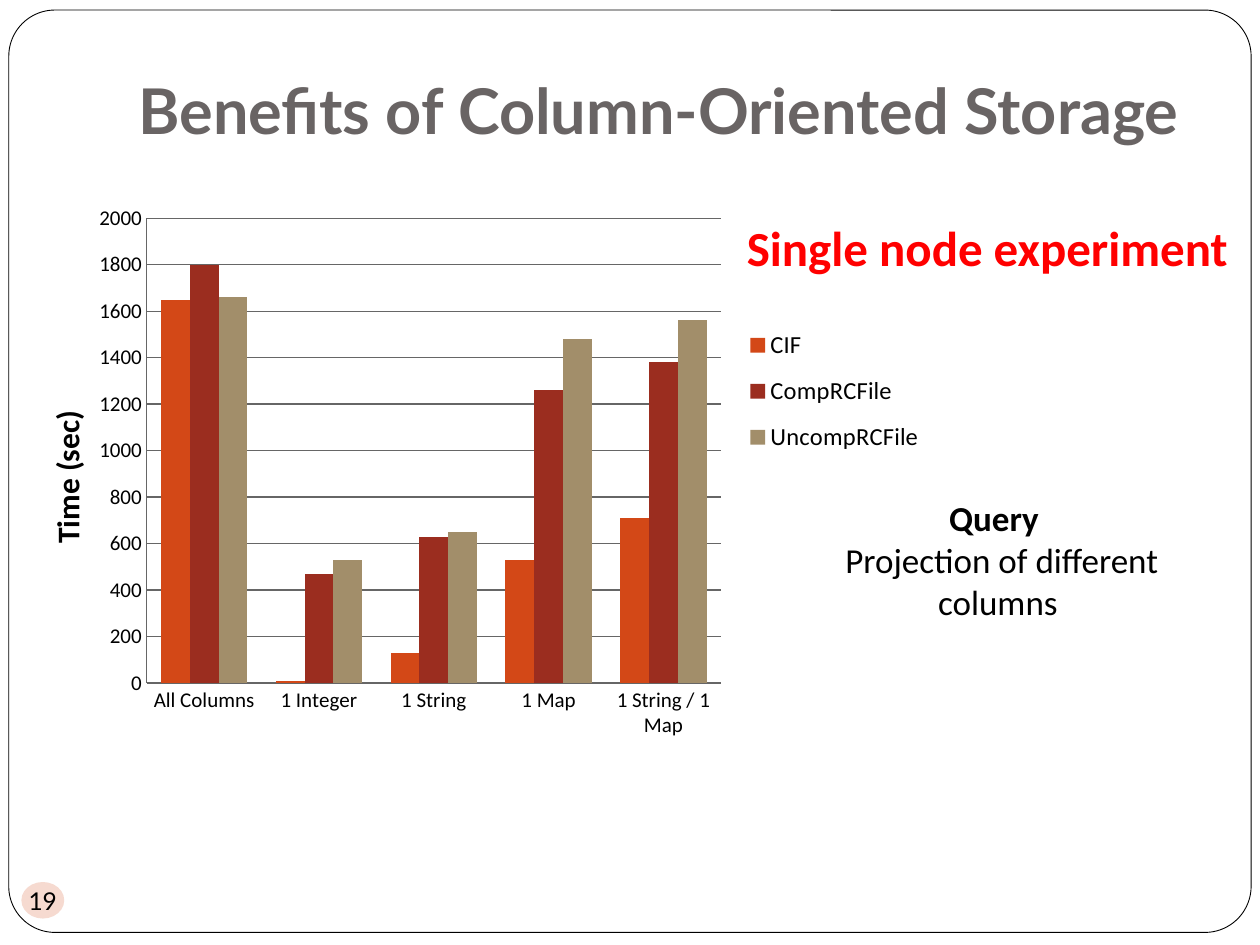
from typing import NamedTuple

from lxml import etree
from pptx import Presentation
from pptx.chart.data import CategoryChartData
from pptx.dml.color import RGBColor
from pptx.enum.chart import XL_CHART_TYPE as ChartType
from pptx.enum.chart import XL_LEGEND_POSITION as LegendPosition
from pptx.enum.chart import XL_TICK_MARK as TickMark
from pptx.enum.shapes import MSO_SHAPE as Shape
from pptx.enum.text import MSO_ANCHOR as Anchor
from pptx.enum.text import PP_ALIGN as Align
from pptx.oxml.ns import qn
from pptx.util import Inches, Pt

COLORS = {
    "paper": "FFFFFF", "ink": "000000", "title": "696464", "accent": "FF0000",
    "badge": "D34817", "grid": "666666",
}


class Box(NamedTuple):
    left: float
    top: float
    width: float
    height: float

    def lengths(self) -> list:
        return [Inches(value) for value in self]


class Line(NamedTuple):
    text: str
    bold: bool = False


class Series(NamedTuple):
    name: str
    seconds: list[int]
    color: str


PROJECTIONS = ["All Columns", "1 Integer", "1 String", "1 Map", "1 String / 1 Map"]
FORMATS = [
    Series("CIF", [1650, 10, 130, 530, 710], "D34817"),
    Series("CompRCFile", [1800, 470, 630, 1260, 1380], "9B2D1F"),
    Series("UncompRCFile", [1660, 530, 650, 1480, 1560], "A28E6A"),
]


def rgb(hex_color: str) -> RGBColor:
    return RGBColor.from_string(hex_color)


def set_font(font, size: float, name: str = "Calibri",
             color: str = COLORS["ink"], bold: bool = False) -> None:
    font.size, font.name, font.bold = Pt(size), name, bold
    font.color.rgb = rgb(color)


def write(shape, lines: list[Line], size: float, name: str = "Calibri",
          color: str = COLORS["ink"], align=Align.CENTER, anchor=Anchor.TOP,
          margins=(0.1, 0.05, 0.1, 0.05), wrap: bool = True) -> None:
    frame = shape.text_frame
    frame.word_wrap, frame.vertical_anchor = wrap, anchor
    (frame.margin_left, frame.margin_top,
     frame.margin_right, frame.margin_bottom) = map(Inches, margins)
    for index, line in enumerate(lines):
        paragraph = frame.add_paragraph() if index else frame.paragraphs[0]
        paragraph.alignment = align
        run = paragraph.add_run()
        run.text = line.text
        set_font(run.font, size, name, color, line.bold)


def add_panel(slide, kind, box: Box, fill: str):
    panel = slide.shapes.add_shape(kind, *box.lengths())
    panel.shadow.inherit = False
    panel.fill.solid()
    panel.fill.fore_color.rgb = rgb(fill)
    return panel


def add_text(slide, box: Box, lines: list[Line], size: float, **text_format):
    textbox = slide.shapes.add_textbox(*box.lengths())
    write(textbox, lines, size, **text_format)


def place(parent, after: str | None, **fractions) -> None:
    """Give a chart part a manual layout, as fractions of the chart."""
    for old in parent.findall(qn("c:layout")):
        parent.remove(old)
    layout = etree.Element(qn("c:layout"))
    manual = etree.SubElement(layout, qn("c:manualLayout"))
    for key, value in fractions.items():
        etree.SubElement(manual, qn(f"c:{key}")).set("val", str(value))
    index = parent.index(parent.find(qn(after))) + 1 if after else 0
    parent.insert(index, layout)


def add_timing_chart(slide, box: Box) -> None:
    data = CategoryChartData()
    data.categories = PROJECTIONS
    for series in FORMATS:
        data.add_series(series.name, series.seconds)
    chart = slide.shapes.add_chart(
        ChartType.COLUMN_CLUSTERED, *box.lengths(), data).chart
    set_font(chart.font, 10, "Times New Roman")
    chart.has_title = False

    plot = chart.plots[0]
    plot.gap_width, plot.overlap, plot.vary_by_categories = 98, 0, False
    for drawn, series in zip(plot.series, FORMATS):
        drawn.format.fill.solid()
        drawn.format.fill.fore_color.rgb = rgb(series.color)
        drawn.invert_if_negative = False

    for axis in (chart.category_axis, chart.value_axis):
        axis.major_tick_mark = axis.minor_tick_mark = TickMark.NONE
        set_font(axis.tick_labels.font, 12)
        axis.format.line.color.rgb = rgb(COLORS["grid"])
    times = chart.value_axis
    times.minimum_scale, times.maximum_scale, times.major_unit = 0, 2000, 200
    times.has_major_gridlines = True
    times.major_gridlines.format.line.color.rgb = rgb(COLORS["grid"])
    caption = times.axis_title.text_frame.paragraphs[0].add_run()
    caption.text = "Time (sec)"
    set_font(caption.font, 18, bold=True)

    chart.has_legend = True
    legend = chart.legend
    legend.position, legend.include_in_layout = LegendPosition.RIGHT, False
    set_font(legend.font, 14)

    plot_area = chart.element.find(f".//{qn('c:plotArea')}")
    place(plot_area, None, layoutTarget="inner", xMode="edge", yMode="edge",
          x=0.138, y=0.035, w=0.632, h=0.846)
    place(plot_area.find(f".//{qn('c:title')}"), "c:tx",
          xMode="edge", yMode="edge", x=0.02, y=0.375)
    place(chart.element.find(f".//{qn('c:legend')}"), "c:legendPos",
          xMode="edge", yMode="edge", x=0.79, y=0.21, w=0.21, h=0.28)


def add_page_number(slide, box: Box, number: str) -> None:
    badge = add_panel(slide, Shape.OVAL, box, COLORS["badge"])
    badge.line.fill.background()
    tint = badge.fill._xPr.find(f".//{qn('a:srgbClr')}")
    etree.SubElement(tint, qn("a:alpha")).set("val", "20000")
    write(badge, [Line(number)], 14, name="Lato", anchor=Anchor.MIDDLE,
          margins=(0, 0, 0, 0), wrap=False)


def main() -> None:
    deck = Presentation()
    deck.slide_width, deck.slide_height = Inches(10), Inches(7.5)
    slide = deck.slides.add_slide(deck.slide_layouts[6])

    border = add_panel(slide, Shape.ROUNDED_RECTANGLE,
                       Box(0.07, 0.08, 9.86, 7.32), COLORS["paper"])
    border.adjustments[0] = 0.05
    border.line.color.rgb = rgb(COLORS["ink"])
    border.line.width = Pt(0.5)

    add_text(slide, Box(1, 0.02, 8.5, 1.25),
             [Line("Benefits of Column-Oriented Storage", True)], 36,
             name="Lato", color=COLORS["title"], align=Align.LEFT,
             anchor=Anchor.BOTTOM, margins=(0.1, 0.05, 0.1, 0.1))
    add_text(slide, Box(6.42, 3.89, 3, 1.11),
             [Line("Query ", True), Line(" Projection of different columns")], 20)
    add_page_number(slide, Box(0.17, 7, 0.34, 0.29), "19")
    add_timing_chart(slide, Box(0.17, 1.58, 7.21, 4.36))
    add_text(slide, Box(5.42, 1.68, 4.83, 0.57),
             [Line("Single node experiment", True)], 28, color=COLORS["accent"])
    deck.save("out.pptx")


if __name__ == "__main__":
    main()
